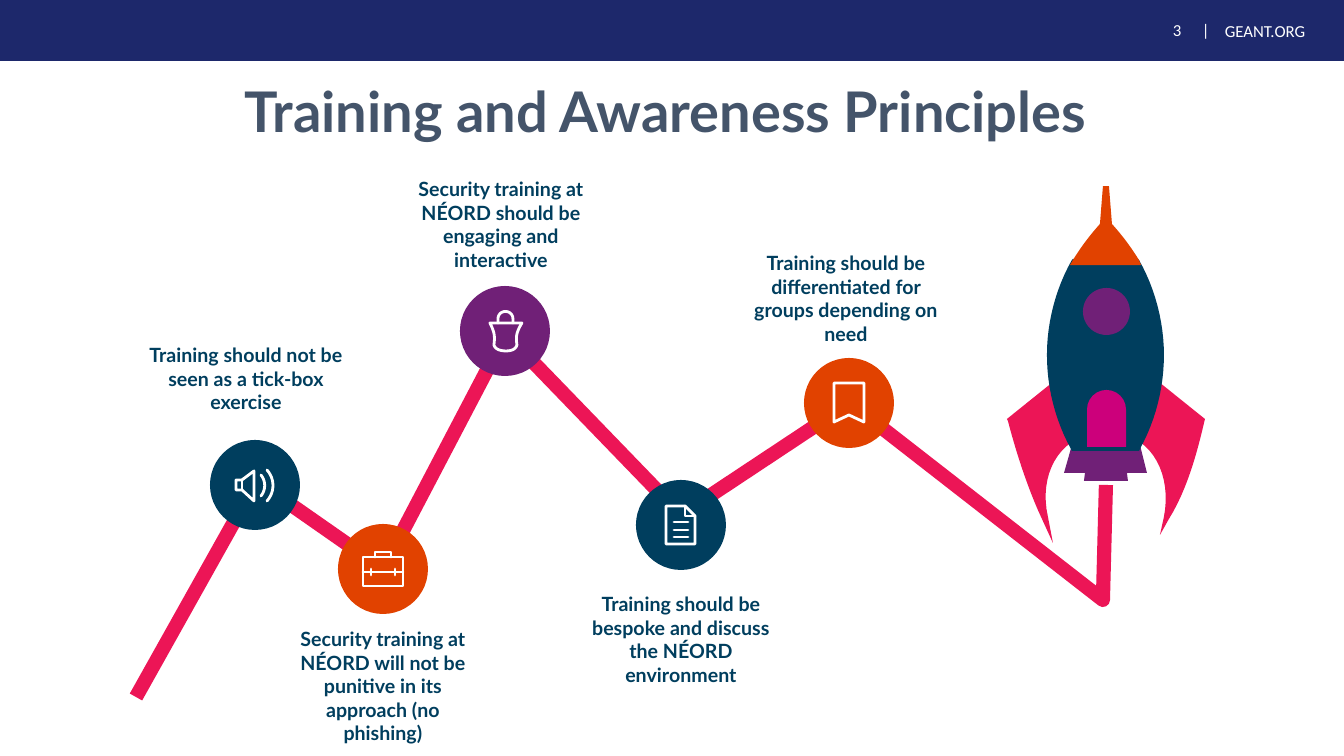
from lxml import etree
from pptx import Presentation
from pptx import util as u
from pptx.dml.color import RGBColor
from pptx.enum import shapes, text
from pptx.oxml.ns import qn

EMU_PER_PX = 914400 / 100.8
NAVY, TEAL, PURPLE, ORANGE = "1D286B", "003E5E", "702077", "E14200"
RED, MAGENTA, SLATE, WHITE = "EC1556", "CC007B", "44546A", "FFFFFF"


def px(value):
    return u.Emu(round(value * EMU_PER_PX))


def colour(hex_string):
    return RGBColor.from_string(hex_string)


def outline(nodes, steps=12):
    """Turn corners (x, y) and cubic curves (six numbers) into points."""
    points = [nodes[0]]
    for node in nodes[1:]:
        if len(node) == 2:
            points.append(node)
            continue
        x0, y0 = points[-1]
        x1, y1, x2, y2, x3, y3 = node
        for step in range(1, steps + 1):
            t = step / steps
            s = 1 - t
            a, b, c, d = s ** 3, 3 * s * s * t, 3 * s * t * t, t ** 3
            points.append((a * x0 + b * x1 + c * x2 + d * x3,
                           a * y0 + b * y1 + c * y2 + d * y3))
    return [(px(x), px(y)) for x, y in points]


class Slide:
    font = "Lato"
    icon_width = 2

    def __init__(self, deck):
        self.page = deck.slides.add_slide(deck.slide_layouts[6])

    def paint(self, shape, fill):
        shape.shadow.inherit = False
        shape.fill.solid()
        shape.fill.fore_color.rgb = colour(fill)
        shape.line.fill.background()
        return shape

    def preset(self, kind, left, top, width, height, fill):
        shape = self.page.shapes.add_shape(
            kind, px(left), px(top), px(width), px(height))
        return self.paint(shape, fill)

    def freeform(self, nodes, closed):
        points = outline(nodes)
        builder = self.page.shapes.build_freeform(*points[0])
        builder.add_line_segments(points[1:], close=closed)
        return builder.convert_to_shape()

    def area(self, nodes, fill):
        return self.paint(self.freeform(nodes, True), fill)

    def stroke(self, nodes, line, width, closed=False, cap="rnd"):
        shape = self.freeform(nodes, closed)
        shape.shadow.inherit = False
        shape.fill.background()
        shape.line.color.rgb = colour(line)
        shape.line.width = u.Pt(width)
        ln = shape.line._get_or_add_ln()
        ln.set("cap", cap)
        etree.SubElement(ln, qn("a:round"))

    def icon(self, strokes):
        for closed, nodes in strokes:
            self.stroke(nodes, WHITE, self.icon_width, closed)

    def words(self, left, top, width, height, wording, size, ink, bold=True,
              font=None, align=text.PP_ALIGN.LEFT,
              anchor=text.MSO_ANCHOR.TOP, tab=None):
        box = self.page.shapes.add_textbox(
            px(left), px(top), px(width), px(height))
        frame = box.text_frame
        frame.word_wrap = True
        frame.vertical_anchor = anchor
        para = frame.paragraphs[0]
        para.text = wording
        para.alignment = align
        if tab:
            stops = etree.SubElement(
                para._p.get_or_add_pPr(), qn("a:tabLst"))
            etree.SubElement(stops, qn("a:tab"), pos=str(px(tab)), algn="l")
        para.font.name = font or self.font
        para.font.size = u.Pt(size)
        para.font.bold = bold
        para.font.color.rgb = colour(ink)


# Icons: (closed, nodes) strokes
SPEAKER = [
    (True, [(236, 480), (242, 480), (254, 471), (254, 501), (242, 490),
            (236, 490)]),
    (False, [(242, 480), (242, 490)]),
    (False, [(261, 475), (266, 481, 266, 490, 261, 496)]),
    (False, [(267, 470), (275, 479, 275, 492, 267, 501)])]
BRIEFCASE = [
    (True, [(363, 557), (403, 557), (403, 586), (363, 586)]),
    (False, [(375, 557), (375, 552), (391, 552), (391, 557)]),
    (False, [(363, 572), (403, 572)])]
BRIEFCASE += [(False, [(x, 569), (x, 575)]) for x in (371, 395)]
BAG = [
    (True, [(490, 323), (522, 323), (516, 333, 516, 337, 517, 345),
            (516, 349, 512, 351, 506, 351), (500, 351, 495, 349, 494, 345),
            (495, 337, 495, 333, 490, 323)]),
    (False, [(498, 323), (498, 319), (498, 309, 513, 309, 513, 319),
             (513, 323)])]
DOCUMENT = [
    (True, [(666, 506), (685, 506), (695, 516), (695, 544), (666, 544)]),
    (False, [(685, 506), (685, 516), (695, 516)])]
DOCUMENT += [(False, [(674, y), (688, y)]) for y in (522, 530, 537)]
BOOKMARK = [
    (True, [(834, 383), (864, 383), (864, 422), (849, 415), (834, 422)])]

# Principles: circle centre, fill, icon, label left and top, wording
PRINCIPLES = [
    (255, 485, TEAL, SPEAKER, 139, 338,
     "Training should not be seen as a tick-box exercise"),
    (383, 569, ORANGE, BRIEFCASE, 276, 622,
     "Security training at NÉORD will not be punitive in its approach "
     "(no phishing)"),
    (505, 331, PURPLE, BAG, 394, 172,
     "Security training at NÉORD should be engaging and interactive"),
    (681, 525, TEAL, DOCUMENT, 574, 587,
     "Training should be bespoke and discuss the NÉORD environment"),
    (849, 403, ORANGE, BOOKMARK, 739, 246,
     "Training should be differentiated for groups depending on need")]
DIAMETER = 90


def main():
    deck = Presentation()
    deck.slide_width, deck.slide_height = px(1344), px(756)
    slide = Slide(deck)
    kinds = shapes.MSO_SHAPE
    middle = text.MSO_ANCHOR.MIDDLE

    # Header band
    slide.preset(kinds.RECTANGLE, 0, 0, 1344, 61, NAVY)
    slide.words(1163, 12, 60, 36, "3\t|", 12, WHITE, False, "Calibri",
                anchor=middle, tab=29)
    slide.words(1215, 15, 125, 32, "GEANT.ORG", 12, WHITE, False, "Calibri",
                anchor=middle)

    # Rocket fins and trail
    slide.area([(1042, 519), (1027, 487, 1015, 448, 1008, 421), (1007, 419),
                (1058, 378), (1112, 432), (1105, 432),
                (1096, 432, 1084, 433, 1072, 442),
                (1050, 457, 1041, 486, 1048, 517), (1053, 543)], RED)
    slide.stroke([(1106, 485), (1103, 600), (850, 403), (681, 515),
                  (506, 334), (383, 569), (257, 481), (136, 697)],
                 RED, 10.12, cap="flat")
    slide.area([(1164, 517), (1170, 486, 1161, 457, 1140, 442),
                (1129, 433, 1116, 432, 1108, 432), (1100, 432), (1154, 378),
                (1205, 419), (1197, 454, 1187, 490, 1169, 519),
                (1160, 535)], RED)

    # Rocket nozzle, body, nose, window and door
    slide.area([(1064, 473), (1072, 445), (1140, 445), (1147, 473),
                (1127, 473), (1128, 481), (1084, 481), (1085, 473)], PURPLE)
    slide.area([(1072, 451), (1071, 449), (1055, 420, 1047, 387, 1047, 355),
                (1047, 322, 1056, 288, 1072, 260), (1073, 259), (1138, 259),
                (1139, 260), (1155, 288, 1164, 322, 1164, 355),
                (1164, 387, 1156, 420, 1140, 449), (1139, 451)], TEAL)
    slide.area([(1070, 265), (1073, 260), (1081, 247, 1090, 235, 1100, 224),
                (1103, 186), (1109, 186), (1112, 224),
                (1122, 235, 1131, 247, 1139, 260), (1141, 265)], ORANGE)
    slide.preset(kinds.OVAL, 1083, 288, 47, 47, PURPLE)
    door = slide.preset(kinds.ROUND_2_SAME_RECTANGLE, 1087, 390, 39, 57,
                        MAGENTA)
    door.adjustments[0] = 0.5

    # Title
    slide.words(235, 72, 923, 77, "Training and Awareness Principles", 40,
                SLATE)

    # Principles along the trail
    for x, y, fill, icon, left, top, wording in PRINCIPLES:
        slide.preset(kinds.OVAL, x - DIAMETER // 2, y - DIAMETER // 2,
                     DIAMETER, DIAMETER, fill)
        slide.icon(icon)
        slide.words(left, top, 214, 105, wording, 14, TEAL,
                    align=text.PP_ALIGN.CENTER)

    deck.save("out.pptx")


if __name__ == "__main__":
    main()
